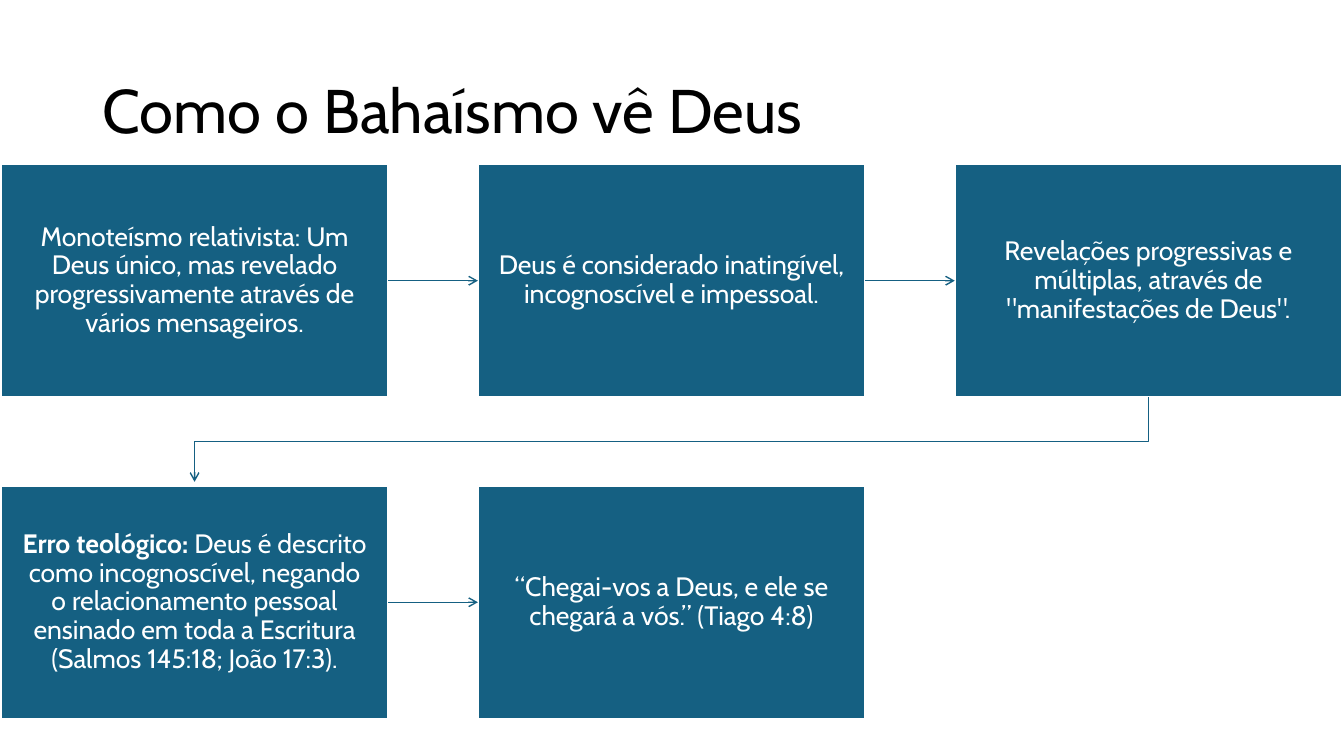
import pptx
import pptx.util
import pptx.dml.color
import pptx.enum.text
import pptx.enum.shapes
import pptx.oxml
import pptx.oxml.ns

Inches, Pt = pptx.util.Inches, pptx.util.Pt
TEXT = pptx.enum.text
FONT, BLUE, WHITE, BLACK = "Cabin", "156082", "FFFFFF", "000000"

WIDE, HIGH = 13.33, 7.5
COLS = 3
BOX_W, BOX_H = 3.84, 2.31
STEP_X, STEP_Y = 4.73, 3.19

# Each step is a list of (text, bold) runs
STEPS = [
    [("Monoteísmo relativista: Um Deus único, mas revelado "
      "progressivamente através de vários mensageiros.", False)],
    [("Deus é considerado inatingível, incognoscível e impessoal.", False)],
    [("Revelações progressivas e múltiplas, através de "
      "\"manifestações de Deus\".", False)],
    [("Erro teológico:", True),
     (" Deus é descrito como incognoscível, negando o relacionamento pessoal "
      "ensinado em toda a Escritura (Salmos 145:18; João 17:3).", False)],
    [("“Chegai-vos a Deus, e ele se chegará a vós.” (Tiago 4:8)", False)],
]


def color(value):
    return pptx.dml.color.RGBColor.from_string(value)


def format(item, values):
    for name, value in values.items():
        setattr(item, name, value)


def write(frame, runs, size, tint, align):
    """Fill a text frame with one paragraph of runs."""
    format(frame, {"word_wrap": True, "auto_size": TEXT.MSO_AUTO_SIZE.NONE,
                   "vertical_anchor": TEXT.MSO_ANCHOR.MIDDLE})
    para = frame.paragraphs[0]
    format(para, {"alignment": align, "line_spacing": 0.9})
    for text, bold in runs:
        run = para.add_run()
        run.text = text
        format(run.font, {"name": FONT, "size": Pt(size), "bold": bold})
        run.font.color.rgb = color(tint)


def add_title(slide, left, top, width, height):
    title = slide.shapes.title
    format(title, {"left": Inches(left), "top": Inches(top),
                   "width": Inches(width), "height": Inches(height)})
    write(title.text_frame, [("Como o Bahaísmo vê Deus", False)],
          44, BLACK, TEXT.PP_ALIGN.LEFT)


def add_box(slide, runs, left, top, width, height):
    box = slide.shapes.add_shape(
        pptx.enum.shapes.MSO_SHAPE.RECTANGLE,
        Inches(left), Inches(top), Inches(width), Inches(height))
    box.shadow.inherit = False
    box.fill.solid()
    box.fill.fore_color.rgb = color(BLUE)
    box.line.color.rgb = color(WHITE)
    box.line.width = Pt(1.5)
    format(box.text_frame, {
        "margin_left": Inches(0.19), "margin_right": Inches(0.19),
        "margin_top": Inches(0.2), "margin_bottom": Inches(0.2)})
    write(box.text_frame, runs, 19, WHITE, TEXT.PP_ALIGN.CENTER)
    return box


def style_arrow(arrow):
    """Thin blue line with an open head and no shadow."""
    arrow.line.color.rgb = color(BLUE)
    arrow.line.width = Pt(1)
    line = arrow.line._get_or_add_ln()
    pptx.oxml.ns.qn("a:tailEnd")
    line.append(pptx.oxml.parse_xml(
        '<a:tailEnd xmlns:a="http://schemas.openxmlformats.org/drawingml/'
        '2006/main" type="arrow"/>'))


def join_row(slide, start, end):
    """Straight arrow from one box to the next in its row."""
    arrow = slide.shapes.add_connector(
        pptx.enum.shapes.MSO_CONNECTOR.STRAIGHT, 0, 0, 0, 0)
    arrow.begin_connect(start, 3)
    arrow.end_connect(end, 1)
    style_arrow(arrow)
    arrow._element.spPr.append(
        pptx.oxml.parse_xml(
            '<a:effectLst xmlns:a="http://schemas.openxmlformats.org/'
            'drawingml/2006/main"/>'))


def wrap_row(slide, start, end):
    """Bent arrow from the end of one row to the start of the next."""
    from_x = start.left + start.width // 2
    to_x = end.left + end.width // 2
    base = start.top + start.height
    mid = (base + end.top) // 2
    tip = end.top - Inches(0.04)
    build = slide.shapes.build_freeform(from_x, base)
    build.add_line_segments([(from_x, mid), (to_x, mid), (to_x, tip)],
                            close=False)
    arrow = build.convert_to_shape()
    arrow.fill.background()
    arrow.shadow.inherit = False
    style_arrow(arrow)


def add_flow(slide, left, top):
    boxes = []
    for i, runs in enumerate(STEPS):
        row, col = divmod(i, COLS)
        boxes.append(add_box(slide, runs, left + col * STEP_X,
                             top + row * STEP_Y, BOX_W, BOX_H))
    for i, (start, end) in enumerate(zip(boxes, boxes[1:]), 1):
        join = join_row if i % COLS else wrap_row
        join(slide, start, end)


def main():
    deck = pptx.Presentation()
    deck.slide_width, deck.slide_height = Inches(WIDE), Inches(HIGH)
    slide = deck.slides.add_slide(deck.slide_layouts[5])
    slide.background.fill.solid()
    slide.background.fill.fore_color.rgb = color(WHITE)
    add_title(slide, 0.92, 0.4, 11.5, 1.45)
    add_flow(slide, 0.01, 1.63)
    deck.save("out.pptx")


if __name__ == "__main__":
    main()
